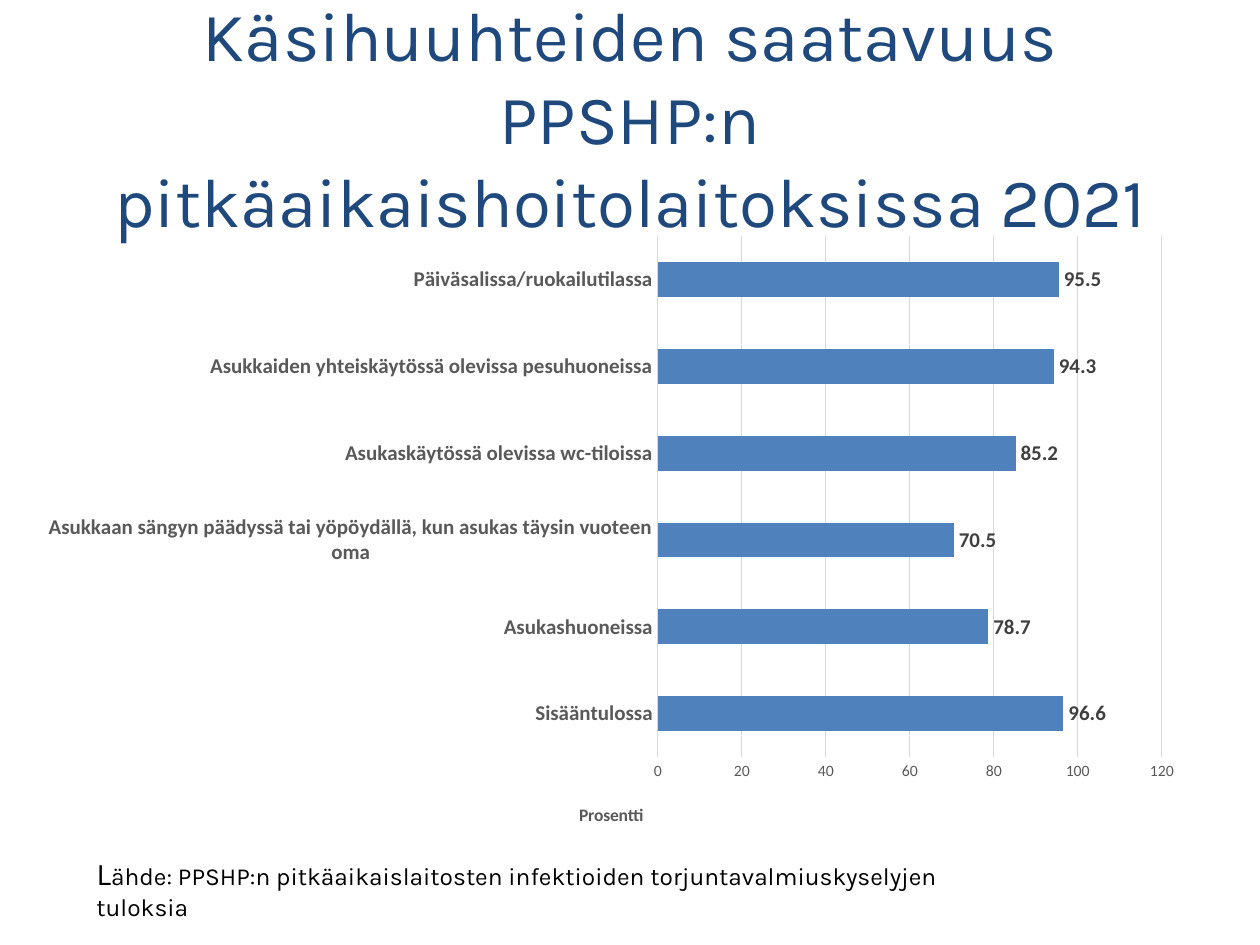
"""Build a slide with a bar chart on hand rub availability."""
from lxml import etree
from pptx import Presentation
from pptx import util as u
from pptx.chart.data import CategoryChartData
from pptx.dml.color import RGBColor
from pptx.enum import chart as ch, text
from pptx.oxml.ns import qn

PX = 914400 // 126
HUES = {"title": "1F497D", "bar": "4F81BD", "grid": "D9D9D9",
        "axis": "595959", "label": "404040", "ink": "000000"}
RATES = [
    ("Sisääntulossa", 96.6),
    ("Asukashuoneissa", 78.7),
    ("Asukkaan sängyn päädyssä tai yöpöydällä, kun asukas täysin vuoteen oma", 70.5),
    ("Asukaskäytössä olevissa wc-tiloissa", 85.2),
    ("Asukkaiden yhteiskäytössä olevissa pesuhuoneissa", 94.3),
    ("Päiväsalissa/ruokailutilassa", 95.5),
]


def scale(*sizes):
    """Turn px into EMU."""
    return [u.Emu(n * PX) for n in sizes]


def style(font, size, hue, bold=False, name="Calibri"):
    """Set the look of a font."""
    font.name, font.size, font.bold = name, u.Pt(size), bold
    font.color.rgb = RGBColor.from_string(HUES[hue])


def add_text(slide, box, runs, hue, align, anchor):
    """Add a wrapped text box of (words, size) runs."""
    frame = slide.shapes.add_textbox(*scale(*box)).text_frame
    frame.word_wrap = True
    frame.vertical_anchor = anchor
    para = frame.paragraphs[0]
    para.alignment = align
    for words, size in runs:
        run = para.add_run()
        run.text = words
        style(run.font, size, hue, name="Karla")


def place(node, inner=False, **parts):
    """Give a chart part a manual layout in fractions of the chart."""
    layout = node.find(qn("c:layout"))
    if layout is None:
        layout = etree.Element(qn("c:layout"))
        node.insert(0, layout)
    manual = etree.SubElement(layout, qn("c:manualLayout"))
    rows = [("layoutTarget", "inner")] if inner else []
    rows += [("xMode", "edge"), ("yMode", "edge"), *parts.items()]
    for tag, val in rows:
        etree.SubElement(manual, qn("c:" + tag)).set("val", str(val))


def style_axis(axis, size, bold=False):
    """Hide an axis line and its ticks and set its labels."""
    axis.major_tick_mark = axis.minor_tick_mark = ch.XL_TICK_MARK.NONE
    axis.format.line.fill.background()
    style(axis.tick_labels.font, size, "axis", bold)


def add_bars(slide, box):
    """Add the bar chart."""
    data = CategoryChartData()
    data.categories = [name for name, rate in RATES]
    data.add_series("Series 1", [rate for name, rate in RATES])
    chart = slide.shapes.add_chart(
        ch.XL_CHART_TYPE.BAR_CLUSTERED, *scale(*box), data).chart
    chart.has_legend = chart.has_title = False
    style(chart.font, 10, "ink")

    style_axis(chart.category_axis, 12, True)
    chart.category_axis.has_major_gridlines = False
    axis = chart.value_axis
    style_axis(axis, 9)
    axis.minimum_scale, axis.maximum_scale, axis.major_unit = 0, 120, 20
    grid = axis.major_gridlines.format.line
    grid.color.rgb = RGBColor.from_string(HUES["grid"])
    grid.width = u.Pt(0.75)
    run = axis.axis_title.text_frame.paragraphs[0].add_run()
    run.text = "Prosentti"
    style(run.font, 10, "axis", True)

    plot = chart.plots[0]
    plot.gap_width, plot.vary_by_categories = 150, False
    fill = plot.series[0].format.fill
    fill.solid()
    fill.fore_color.rgb = RGBColor.from_string(HUES["bar"])
    plot.has_data_labels = True
    labels = plot.data_labels
    labels.show_value = True
    labels.position = ch.XL_LABEL_POSITION.OUTSIDE_END
    style(labels.font, 12, "label", True)

    place(chart.element.find(".//" + qn("c:plotArea")), True,
          x=0.54, y=0.02, w=0.43, h=0.84)
    place(axis.axis_title.element if hasattr(axis.axis_title, "element")
          else chart.element.find(".//" + qn("c:valAx")).find(qn("c:title")),
          x=0.47, y=0.93)


def main():
    """Make the deck and save it."""
    deck = Presentation()
    deck.slide_width, deck.slide_height = scale(1260, 945)
    slide = deck.slides.add_slide(deck.slide_layouts[6])
    add_text(slide, (63, 38, 1134, 157),
             [("Käsihuuhteiden saatavuus PPSHP:n pitkäaikaishoitolaitoksissa 2021", 39.6)],
             "title", text.PP_ALIGN.CENTER, text.MSO_ANCHOR.MIDDLE)
    add_bars(slide, (25, 224, 1172, 620))
    add_text(slide, (84, 848, 903, 81),
             [("L", 18),
              ("ähde: PPSHP:n pitkäaikaislaitosten infektioiden "
               "torjuntavalmiuskyselyjen tuloksia", 14)],
             "ink", text.PP_ALIGN.LEFT, text.MSO_ANCHOR.TOP)
    deck.save("out.pptx")


if __name__ == "__main__":
    main()
